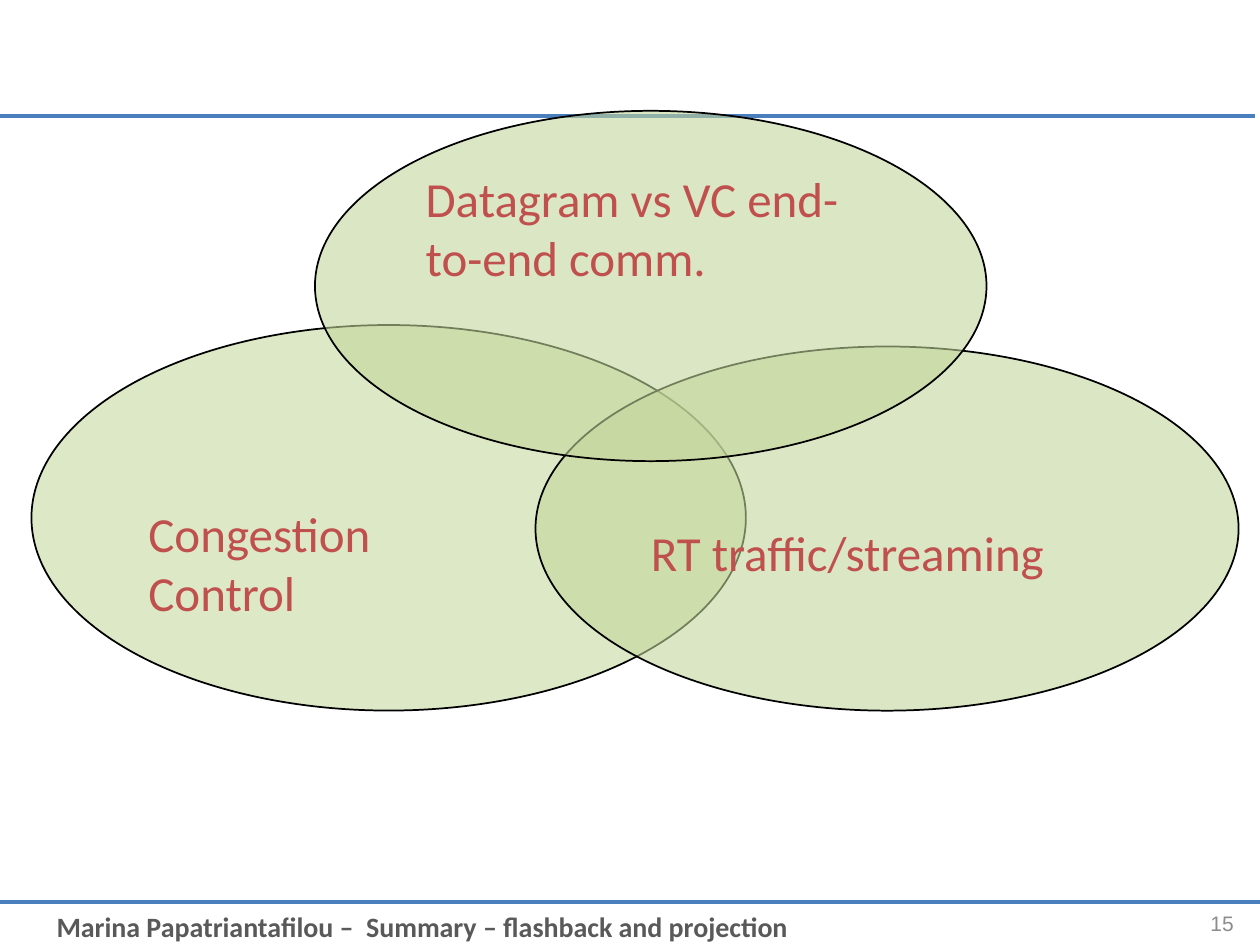
from dataclasses import dataclass

import pptx
import pptx.dml.color
import pptx.enum.shapes
import pptx.enum.text
import pptx.oxml.ns
import pptx.util
from lxml import etree
from pptx.util import Inches

COLORS = {
    "rule": "4B7EBC",
    "oval": "C3D69B",
    "outline": "000000",
    "topic": "C0504D",
    "footer": "595959",
    "number": "8C8C8C",
}
BLANK_LAYOUT = 6
LEFT = pptx.enum.text.PP_ALIGN.LEFT
RIGHT = pptx.enum.text.PP_ALIGN.RIGHT


@dataclass
class Topic:
    lines: list[str]
    box: tuple[float, float, float, float]
    opacity: int
    top_inset: float


TOPICS = [
    Topic(["Congestion", "Control"], (0.25, 2.58, 5.67, 3.06), 56, 0.97),
    Topic(["RT traffic/streaming"], (4.25, 2.75, 5.58, 2.89), 59, 0.97),
    Topic(["Datagram vs VC end-to-end comm."], (2.5, 0.88, 5.33, 2.78), 59, 0.05),
]


def rgb(name: str) -> pptx.dml.color.RGBColor:
    return pptx.dml.color.RGBColor.from_string(COLORS[name])


def write(tf, lines: list[str], size: int, color: str, font="Calibri",
          bold=False, align=LEFT) -> None:
    tf.word_wrap = True
    for i, line in enumerate(lines):
        p = tf.paragraphs[0] if i == 0 else tf.add_paragraph()
        p.text = line
        p.alignment = align
        p.font.name = font
        p.font.size = pptx.util.Pt(size)
        p.font.bold = bold
        p.font.color.rgb = rgb(color)


def add_rule(s, x: float, y: float) -> None:
    line = s.shapes.add_connector(
        pptx.enum.shapes.MSO_CONNECTOR.STRAIGHT,
        Inches(x), Inches(y), Inches(x + 10), Inches(y))
    line.line.color.rgb = rgb("rule")
    line.line.width = pptx.util.Pt(2.25)
    etree.SubElement(line._element.spPr, pptx.oxml.ns.qn("a:effectLst"))


def add_topic(s, topic: Topic) -> None:
    sp = s.shapes.add_shape(pptx.enum.shapes.MSO_SHAPE.OVAL,
                            *map(Inches, topic.box))
    sp.shadow.inherit = False
    sp.fill.solid()
    sp.fill.fore_color.rgb = rgb("oval")
    color = sp._element.spPr.find(".//" + pptx.oxml.ns.qn("a:srgbClr"))
    etree.SubElement(color, pptx.oxml.ns.qn("a:alpha"),
                     val=str(topic.opacity * 1000))
    sp.line.color.rgb = rgb("outline")
    sp.line.width = pptx.util.Pt(1)
    tf = sp.text_frame
    tf.vertical_anchor = pptx.enum.text.MSO_ANCHOR.TOP
    tf.margin_top = Inches(topic.top_inset)
    write(tf, topic.lines, 28, "topic")


def main() -> None:
    prs = pptx.Presentation()
    prs.slide_width, prs.slide_height = Inches(10), Inches(7.5)
    s = prs.slides.add_slide(prs.slide_layouts[BLANK_LAYOUT])

    # Header and footer rules
    add_rule(s, 0, 7.16)
    add_rule(s, -0.04, 0.92)

    # Footer text and slide number
    footer = s.shapes.add_textbox(*map(Inches, (0.35, 7.17, 9.25, 0.37)))
    write(footer.text_frame,
          ["Marina Papatriantafilou –  Summary – flashback and projection"],
          16, "footer", bold=True)
    number = s.shapes.add_textbox(*map(Inches, (9.09, 7.13, 0.8, 0.4)))
    number.text_frame.vertical_anchor = pptx.enum.text.MSO_ANCHOR.MIDDLE
    write(number.text_frame, ["15"], 12, "number", font="Arial", align=RIGHT)

    # Overlapping topics, back to front
    for topic in TOPICS:
        add_topic(s, topic)

    prs.save("out.pptx")


if __name__ == "__main__":
    main()
